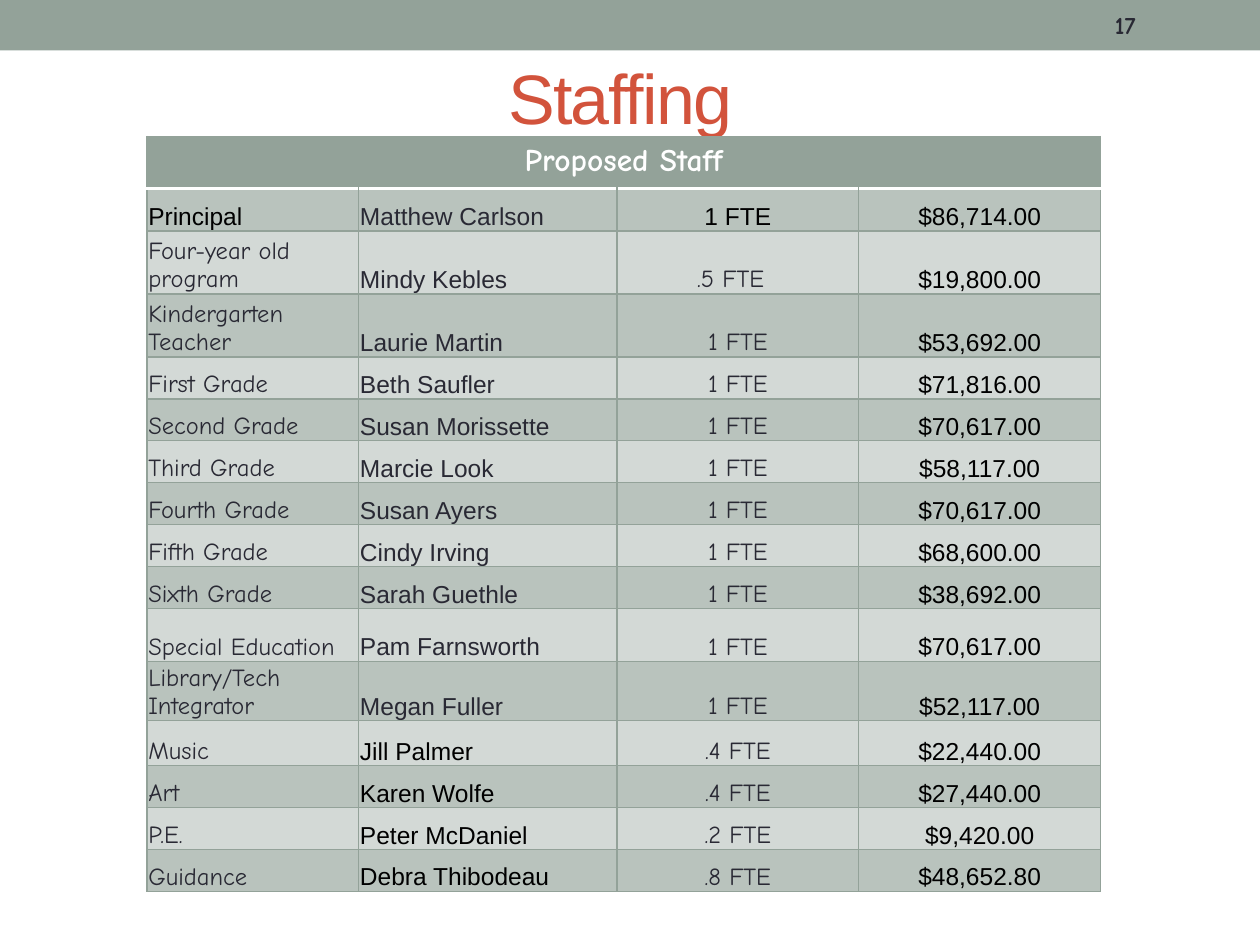
from lxml.etree import SubElement
from pptx import Presentation
from pptx.dml.color import RGBColor as RGB
from pptx.enum.shapes import MSO_SHAPE as SHAPE
from pptx.enum.text import MSO_ANCHOR as ANCHOR, PP_ALIGN as ALIGN
from pptx.oxml.ns import qn
from pptx.util import Pt

COLORS = {"sage": "93A299", "rust": "D2533C", "ink": "292934",
          "black": "000000", "white": "FFFFFF"}
SANS, COMIC = "Arial", "Comic Neue"

COLUMN_WIDTHS = [121, 147.6, 138.2, 138.2]
HEADER_HEIGHT = 29.5
# role, name, share of full time, salary, row height
STAFF = [
    ("Principal", "Matthew Carlson", "1 FTE", "$86,714.00", 24.5),
    ("Four-year old program", "Mindy Kebles", ".5 FTE", "$19,800.00", 36),
    ("Kindergarten Teacher", "Laurie Martin", "1 FTE", "$53,692.00", 36),
    ("First Grade", "Beth Saufler", "1 FTE", "$71,816.00", 24),
    ("Second Grade", "Susan Morissette", "1 FTE", "$70,617.00", 24),
    ("Third Grade", "Marcie Look", "1 FTE", "$58,117.00", 24),
    ("Fourth Grade", "Susan Ayers", "1 FTE", "$70,617.00", 24),
    ("Fifth Grade", "Cindy Irving", "1 FTE", "$68,600.00", 24),
    ("Sixth Grade", "Sarah Guethle", "1 FTE", "$38,692.00", 24),
    ("Special Education", "Pam Farnsworth", "1 FTE", "$70,617.00", 30),
    ("Library/Tech Integrator", "Megan Fuller", "1 FTE", "$52,117.00", 34),
    ("Music", "Jill Palmer", ".4 FTE", "$22,440.00", 25.5),
    ("Art", "Karen Wolfe", ".4 FTE", "$27,440.00", 24),
    ("P.E.", "Peter McDaniel", ".2 FTE", "$9,420.00", 24),
    ("Guidance", "Debra Thibodeau", ".8 FTE", "$48,652.80", 24),
]
FIRST_SPECIALIST = 12


def write(frame, text, size=14, font=SANS, color="ink", bold=False,
          align=ALIGN.LEFT, spacing=None):
    paragraph = frame.paragraphs[0]
    paragraph.alignment = align
    run = paragraph.add_run()
    run.text = text
    run.font.size = Pt(size)
    run.font.name = font
    run.font.bold = bold
    run.font.color.rgb = RGB.from_string(COLORS[color])
    if spacing is not None:
        run.font._element.set("spc", str(int(spacing * 100)))


def fill_cell(cell, color, opacity=100):
    cell.fill.solid()
    cell.fill.fore_color.rgb = RGB.from_string(COLORS[color])
    if opacity < 100:
        tint = cell._tc.tcPr.find(".//" + qn("a:srgbClr"))
        SubElement(tint, qn("a:alpha"), val=str(opacity * 1000))


def border_cell(cell, **special):
    """Draw thin sage borders; special maps a side (L, R, T, B) to (color, width)."""
    properties = cell._tc.get_or_add_tcPr()
    for place, side in enumerate("LRTB"):
        color, width = special.get(side, ("sage", 0.75))
        line = SubElement(properties, qn(f"a:ln{side}"), w=str(int(Pt(width))))
        solid = SubElement(line, qn("a:solidFill"))
        SubElement(solid, qn("a:srgbClr"), val=COLORS[color])
        properties.insert(place, line)


def staff_formats(number):
    """Formats for the four cells of a staff row, counted from 1."""
    is_principal = number == 1
    main_font, main_color = (SANS, "black") if is_principal else (COMIC, "ink")
    name_color = "black" if number >= FIRST_SPECIALIST else "ink"
    return [
        dict(font=main_font, color=main_color),
        dict(color=name_color),
        dict(font=main_font, color=main_color, align=ALIGN.CENTER),
        dict(color="black", align=ALIGN.CENTER),
    ]


class StaffingSlide:
    def __init__(self, deck):
        self.slide = deck.slides.add_slide(deck.slide_layouts[5])
        self.shapes = self.slide.shapes

    def band(self, left, top, width, height, color):
        band = self.shapes.add_shape(SHAPE.RECTANGLE, Pt(left), Pt(top),
                                     Pt(width), Pt(height))
        band.shadow.inherit = False
        band.fill.solid()
        band.fill.fore_color.rgb = RGB.from_string(COLORS[color])
        band.line.fill.background()

    def title(self, text, left, top, width, height):
        title = self.shapes.title
        title.left, title.top = Pt(left), Pt(top)
        title.width, title.height = Pt(width), Pt(height)
        title.text_frame.vertical_anchor = ANCHOR.MIDDLE
        write(title.text_frame, text, size=40, color="rust",
              align=ALIGN.CENTER, spacing=-1)

    def page_number(self, text, left, top, width, height):
        box = self.shapes.add_textbox(Pt(left), Pt(top), Pt(width), Pt(height))
        box.text_frame.word_wrap = True
        box.text_frame.vertical_anchor = ANCHOR.MIDDLE
        write(box.text_frame, text, font=COMIC, bold=True)

    def staff_table(self, heading, left, top):
        heights = [HEADER_HEIGHT] + [row[-1] for row in STAFF]
        table = self.shapes.add_table(
            len(heights), len(COLUMN_WIDTHS), Pt(left), Pt(top),
            Pt(sum(COLUMN_WIDTHS)), Pt(sum(heights))).table
        table.first_row = table.horz_banding = False
        for column, width in zip(table.columns, COLUMN_WIDTHS):
            column.width = Pt(width)
        for row, height in zip(table.rows, heights):
            row.height = Pt(height)

        divider = ("white", 2.08)
        header = table.cell(0, 0)
        header.merge(table.cell(0, len(COLUMN_WIDTHS) - 1))
        write(header.text_frame, heading, size=18, font=COMIC, color="white",
              bold=True, align=ALIGN.CENTER)
        for cell in table.rows[0].cells:
            fill_cell(cell, "sage")
            border_cell(cell, B=divider)

        for number, (*entries, _) in enumerate(STAFF, start=1):
            edges = {"T": divider} if number == 1 else {}
            formats = staff_formats(number)
            for column, (entry, style) in enumerate(zip(entries, formats)):
                cell = table.cell(number, column)
                cell.vertical_anchor = ANCHOR.BOTTOM
                cell.margin_left = cell.margin_top = Pt(0.75)
                # The half-time share sits a little left of centre.
                cell.margin_right = Pt(9 if entry == ".5 FTE" else 0.75)
                cell.margin_bottom = Pt(0)
                write(cell.text_frame, entry, **style)
                fill_cell(cell, "sage", opacity=64 if number % 2 else 40)
                border_cell(cell, **edges)


def main():
    deck = Presentation()
    deck.slide_width, deck.slide_height = Pt(720), Pt(540)
    staffing = StaffingSlide(deck)
    staffing.band(0, 0, 720, 28.8, "sage")
    staffing.title("Staffing", 84, 14.4, 541, 81.4)
    staffing.staff_table("Proposed Staff", 84, 78)
    staffing.page_number("17", 630, 1.4, 54, 26)
    deck.save("out.pptx")


if __name__ == "__main__":
    main()
